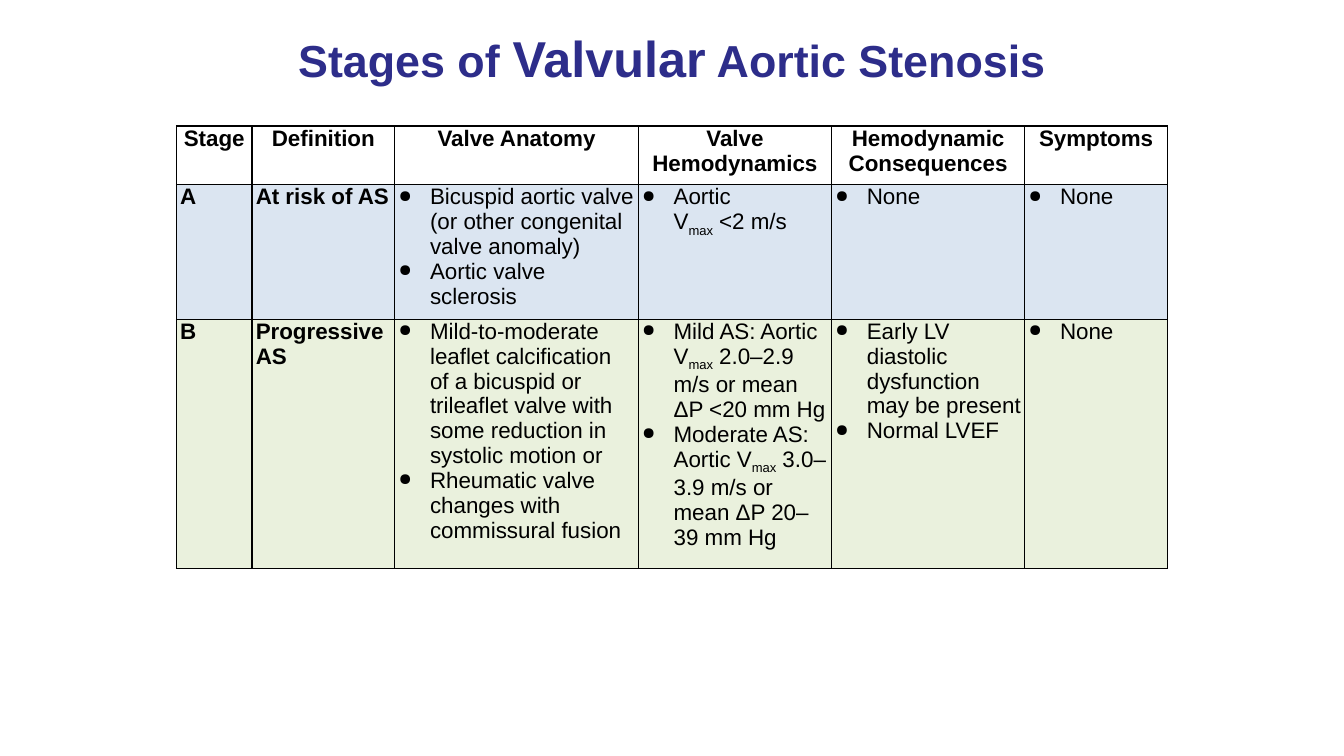
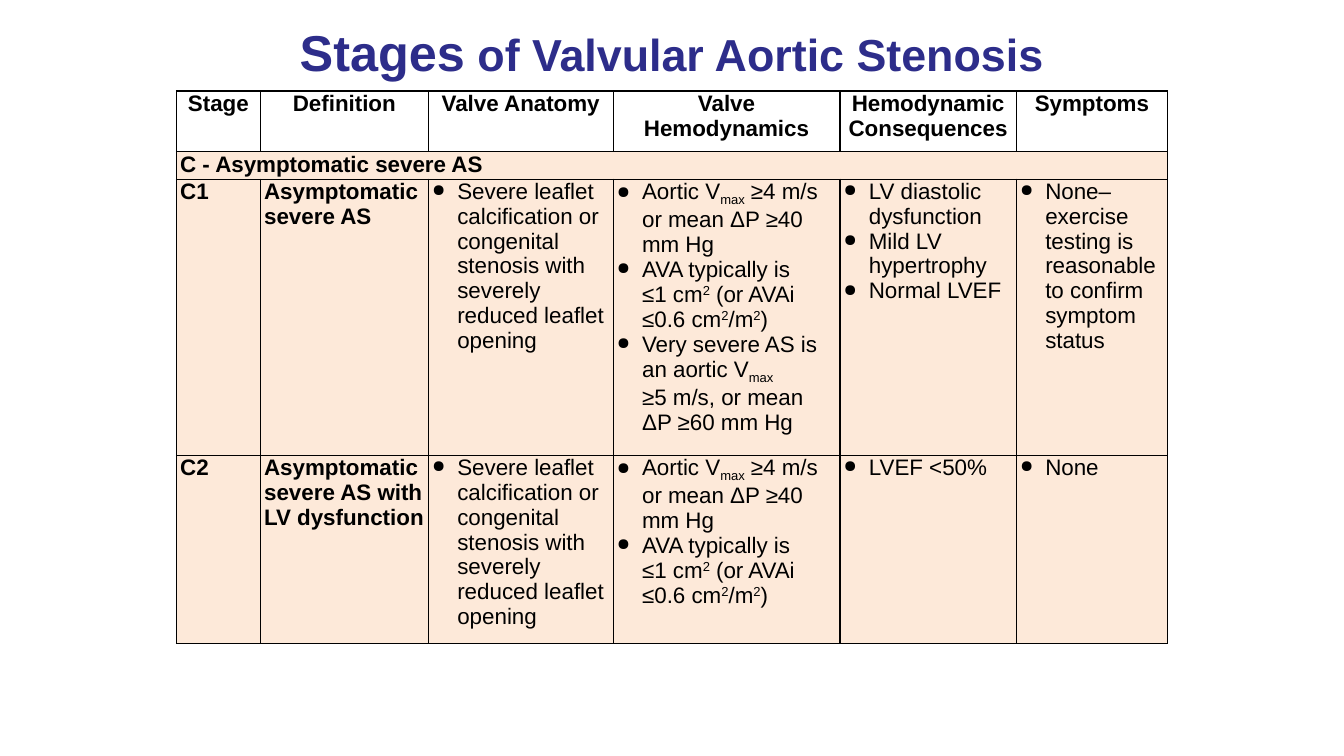
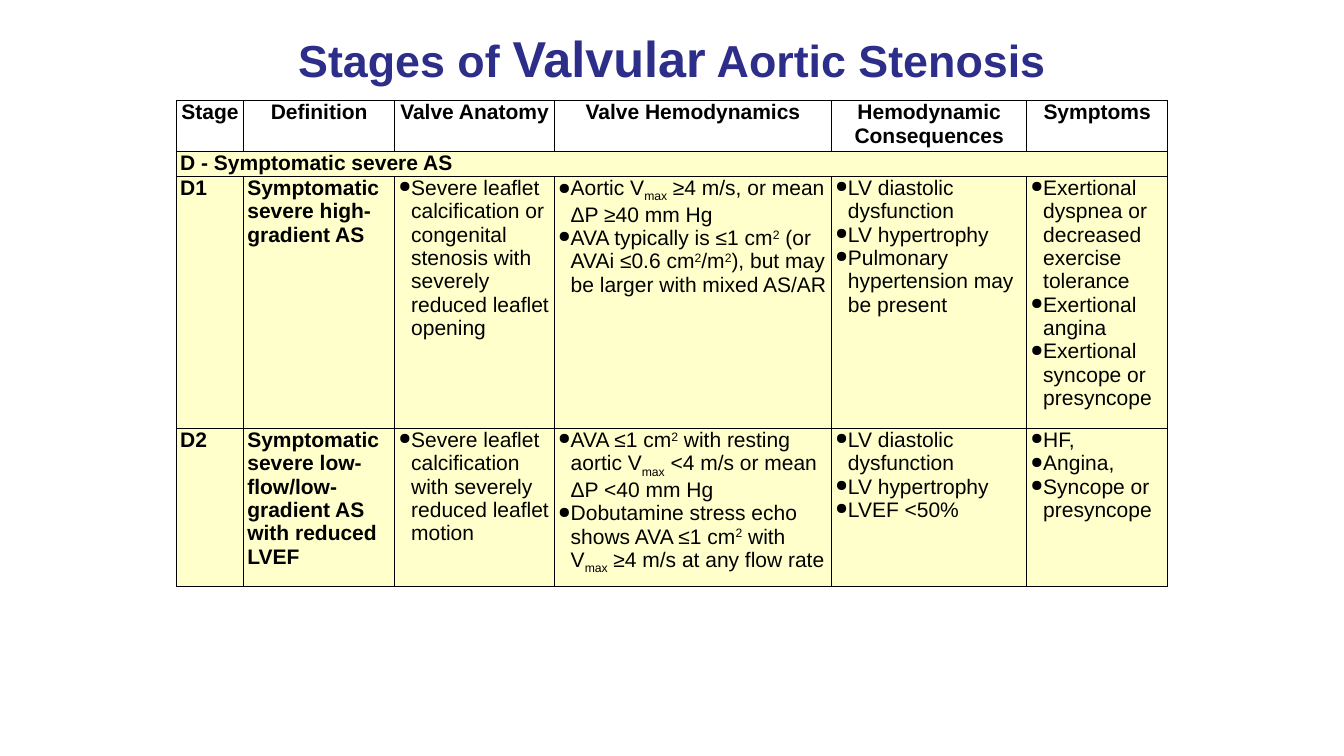
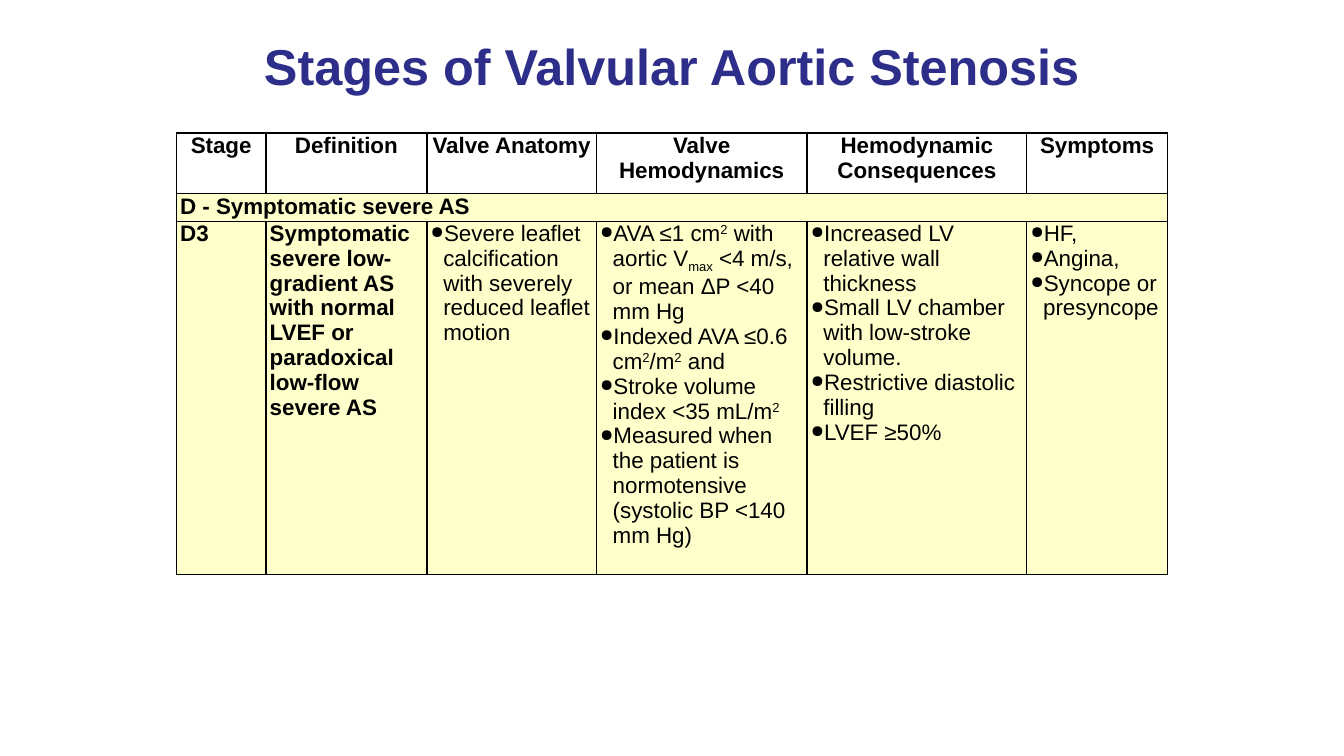
from dataclasses import dataclass

from lxml.etree import SubElement
from pptx import Presentation
from pptx.dml.color import RGBColor
from pptx.enum.text import MSO_ANCHOR, PP_ALIGN
from pptx.oxml.ns import qn
from pptx.util import Pt


@dataclass(frozen=True)
class Theme:
    font: str = "Arial"
    title_color: str = "2D2D8A"
    ink: str = "000000"
    white: str = "FFFFFF"
    stage_a: str = "DBE5F1"
    stage_b: str = "EAF1DD"
    stage_c: str = "FDE9D9"
    stage_d: str = "FFFFCC"
    title_size: float = 32
    title_large: float = 36
    table_size: float = 16
    table_small: float = 15
    border: float = 1
    inset: float = 2.7
    subscript: int = -25000
    superscript: int = 30000


THEME = Theme()
MARK = "|"
CONTINUED = "+ "
TABLE_LEFT = 126
HEADINGS = ["Stage", "Definition", "Valve Anatomy", "Valve Hemodynamics",
            "Hemodynamic Consequences", "Symptoms"]


class StageDeck:
    def __init__(self, theme):
        self.theme = theme
        self.deck = Presentation()
        self.deck.slide_width = Pt(960)
        self.deck.slide_height = Pt(540)
        self.page = None

    def add_page(self):
        self.page = self.deck.slides.add_slide(self.deck.slide_layouts[6])

    def fill_paragraph(self, paragraph, marked_text, size, color, bold):
        pieces = [(text, index % 2 == 1)
                  for index, text in enumerate(marked_text.split(MARK)) if text]
        paragraph.text = pieces[0][0]
        for text, _ in pieces[1:]:
            paragraph.add_run().text = text
        for span in paragraph.runs:
            span.font.name = self.theme.font
            span.font.size = Pt(size)
            span.font.bold = bold
            span.font.color.rgb = RGBColor.from_string(color)
        return [span for span, (_, marked) in zip(paragraph.runs, pieces) if marked]

    def title(self, marked_text, top):
        box = self.page.shapes.add_textbox(Pt(156), Pt(top), Pt(648), Pt(50))
        frame = box.text_frame
        frame.word_wrap = True
        frame.vertical_anchor = MSO_ANCHOR.MIDDLE
        para = frame.paragraphs[0]
        para.alignment = PP_ALIGN.CENTER
        for span in self.fill_paragraph(para, marked_text, self.theme.title_size,
                                        self.theme.title_color, True):
            span.font.size = Pt(self.theme.title_large)

    def style_cell(self, cell, fill):
        cell.margin_left = cell.margin_right = Pt(self.theme.inset)
        cell.margin_top = cell.margin_bottom = 0
        properties = cell._tc.get_or_add_tcPr()
        for side in ("a:lnL", "a:lnR", "a:lnT", "a:lnB"):
            line = SubElement(properties, qn(side), w=str(Pt(self.theme.border)))
            solid = SubElement(line, qn("a:solidFill"))
            SubElement(solid, qn("a:srgbClr"), val=self.theme.ink)
        cell.fill.solid()
        cell.fill.fore_color.rgb = RGBColor.from_string(fill)

    def cell_text(self, cell, text, size, bold, alignment=None):
        para = cell.text_frame.paragraphs[0]
        para.alignment = alignment
        self.fill_paragraph(para, text, size, self.theme.ink, bold)

    def bullets(self, cell, items, size, indent):
        frame = cell.text_frame
        for index, item in enumerate(items):
            para = frame.paragraphs[0] if index == 0 else frame.add_paragraph()
            continued = item.startswith(CONTINUED)
            text = item.removeprefix(CONTINUED)
            for span in self.fill_paragraph(para, text, size, self.theme.ink, False):
                offset = self.theme.subscript if span.text == "max" else self.theme.superscript
                span.font._element.set("baseline", str(offset))
            properties = para._p.get_or_add_pPr()
            properties.set("marL", str(Pt(indent)))
            properties.set("indent", str(0 if continued else -Pt(indent)))
            if not continued:
                SubElement(properties, qn("a:buSzPct"), val="75000")
                SubElement(properties, qn("a:buChar"), char="●")

    def table(self, top, widths, heights, fills, rows, size, indent):
        rows = [HEADINGS, *rows]
        fills = [self.theme.white, *fills]
        frame = self.page.shapes.add_table(
            len(rows), len(widths), Pt(TABLE_LEFT), Pt(top), Pt(sum(widths)), Pt(sum(heights)))
        table = frame.table
        table.first_row = False
        table.horz_banding = False
        for column, width in zip(table.columns, widths):
            column.width = Pt(width)
        for index, (row, height, fill, contents) in enumerate(
                zip(table.rows, heights, fills, rows)):
            row.height = Pt(height)
            cells = list(row.cells)
            for cell in cells:
                self.style_cell(cell, fill)
            if len(contents) == 1:
                cells[0].merge(cells[-1])
            alignment = PP_ALIGN.CENTER if index == 0 else None
            for cell, content in zip(cells, contents):
                if isinstance(content, list):
                    self.bullets(cell, content, size, indent)
                else:
                    self.cell_text(cell, content, size, True, alignment)


SEVERE_OPENING = ["Severe leaflet calcification or congenital stenosis with "
                  "severely reduced leaflet opening"]
SEVERE_MOTION = ["Severe leaflet calcification with severely reduced leaflet motion"]
SEVERE_FLOW = ["Aortic V|max| ≥4 m/s or mean ΔP ≥40 mm Hg",
               "AVA typically is",
               "+ ≤1 cm|2| (or AVAi",
               "+ ≤0.6 cm|2|/m|2|)"]
LOW_FLOW_SYMPTOMS = ["HF,", "Angina,", "Syncope or presyncope"]
SYMPTOMATIC_BAND = ["D - Symptomatic severe AS"]
VALVULAR_TITLE = "Stages of |Valvular| Aortic Stenosis"

STAGES_A_B = [
    ["A", "At risk of AS",
     ["Bicuspid aortic valve (or other congenital valve anomaly)", "Aortic valve sclerosis"],
     ["Aortic", "+ V|max| <2 m/s"],
     ["None"],
     ["None"]],
    ["B", "Progressive AS",
     ["Mild-to-moderate leaflet calcification of a bicuspid or trileaflet valve "
      "with some reduction in systolic motion or",
      "Rheumatic valve changes with commissural fusion"],
     ["Mild AS: Aortic V|max| 2.0–2.9 m/s or mean ΔP <20 mm Hg",
      "Moderate AS: Aortic V|max| 3.0–3.9 m/s or mean ΔP 20–39 mm Hg"],
     ["Early LV diastolic dysfunction may be present", "Normal LVEF"],
     ["None"]],
]
STAGES_C = [
    ["C - Asymptomatic severe AS"],
    ["C1", "Asymptomatic severe AS",
     SEVERE_OPENING,
     SEVERE_FLOW + ["Very severe AS is an aortic V|max", "+ ≥5 m/s, or mean",
                    "+ ΔP ≥60 mm Hg"],
     ["LV diastolic dysfunction", "Mild LV hypertrophy", "Normal LVEF"],
     ["None–exercise testing is reasonable to confirm symptom status"]],
    ["C2", "Asymptomatic severe AS with LV dysfunction",
     SEVERE_OPENING,
     SEVERE_FLOW,
     ["LVEF <50%"],
     ["None"]],
]
STAGES_D1_D2 = [
    SYMPTOMATIC_BAND,
    ["D1", "Symptomatic severe high-gradient AS",
     SEVERE_OPENING,
     ["Aortic V|max| ≥4 m/s, or mean ΔP ≥40 mm Hg",
      "AVA typically is ≤1 cm|2| (or AVAi ≤0.6 cm|2|/m|2|), "
      "but may be larger with mixed AS/AR"],
     ["LV diastolic dysfunction", "LV hypertrophy", "Pulmonary hypertension may be present"],
     ["Exertional dyspnea or decreased exercise tolerance", "Exertional angina",
      "Exertional syncope or presyncope"]],
    ["D2", "Symptomatic severe low-flow/low-gradient AS with reduced LVEF",
     SEVERE_MOTION,
     ["AVA ≤1 cm|2| with resting aortic V|max| <4 m/s or mean ΔP <40 mm Hg",
      "Dobutamine stress echo shows AVA ≤1 cm|2| with V|max| ≥4 m/s at any flow rate"],
     ["LV diastolic dysfunction", "LV hypertrophy", "LVEF <50%"],
     LOW_FLOW_SYMPTOMS],
]
STAGE_D3 = [
    SYMPTOMATIC_BAND,
    ["D3", "Symptomatic severe low-gradient AS with normal LVEF or paradoxical "
           "low-flow severe AS",
     SEVERE_MOTION,
     ["AVA ≤1 cm|2| with aortic V|max| <4 m/s, or mean ΔP <40 mm Hg",
      "Indexed AVA ≤0.6 cm|2|/m|2| and",
      "Stroke volume index <35 mL/m|2",
      "Measured when the patient is normotensive (systolic BP <140 mm Hg)"],
     ["Increased LV relative wall thickness", "Small LV chamber with low-stroke volume.",
      "Restrictive diastolic filling", "LVEF ≥50%"],
     LOW_FLOW_SYMPTOMS],
]


def main():
    stages = StageDeck(THEME)

    stages.add_page()
    stages.title(VALVULAR_TITLE, 16)
    stages.table(90, [54, 102, 174, 138, 138, 102], [42, 89, 165],
                 [THEME.stage_a, THEME.stage_b], STAGES_A_B, THEME.table_size, 22.5)

    stages.add_page()
    stages.title("|Stages| of Valvular Aortic Stenosis", 12)
    stages.table(65, [60, 120, 132, 162, 126, 108], [43.5, 19.5, 191.5, 134.5],
                 [THEME.stage_c] * 3, STAGES_C, THEME.table_size, 18)

    stages.add_page()
    stages.title(VALVULAR_TITLE, 16)
    stages.table(72, [48, 108, 114, 198, 139.5, 100.5], [33, 16, 167, 104],
                 [THEME.stage_d] * 3, STAGES_D1_D2, THEME.table_small, 9)

    stages.add_page()
    stages.title("|Stages of Valvular Aortic Stenosis", 21.5)
    stages.table(95, [64, 115, 121, 150.5, 157, 100.5], [43.5, 19.5, 249.5],
                 [THEME.stage_d] * 2, STAGE_D3, THEME.table_size, 9)

    stages.deck.save("out.pptx")


if __name__ == "__main__":
    main()
